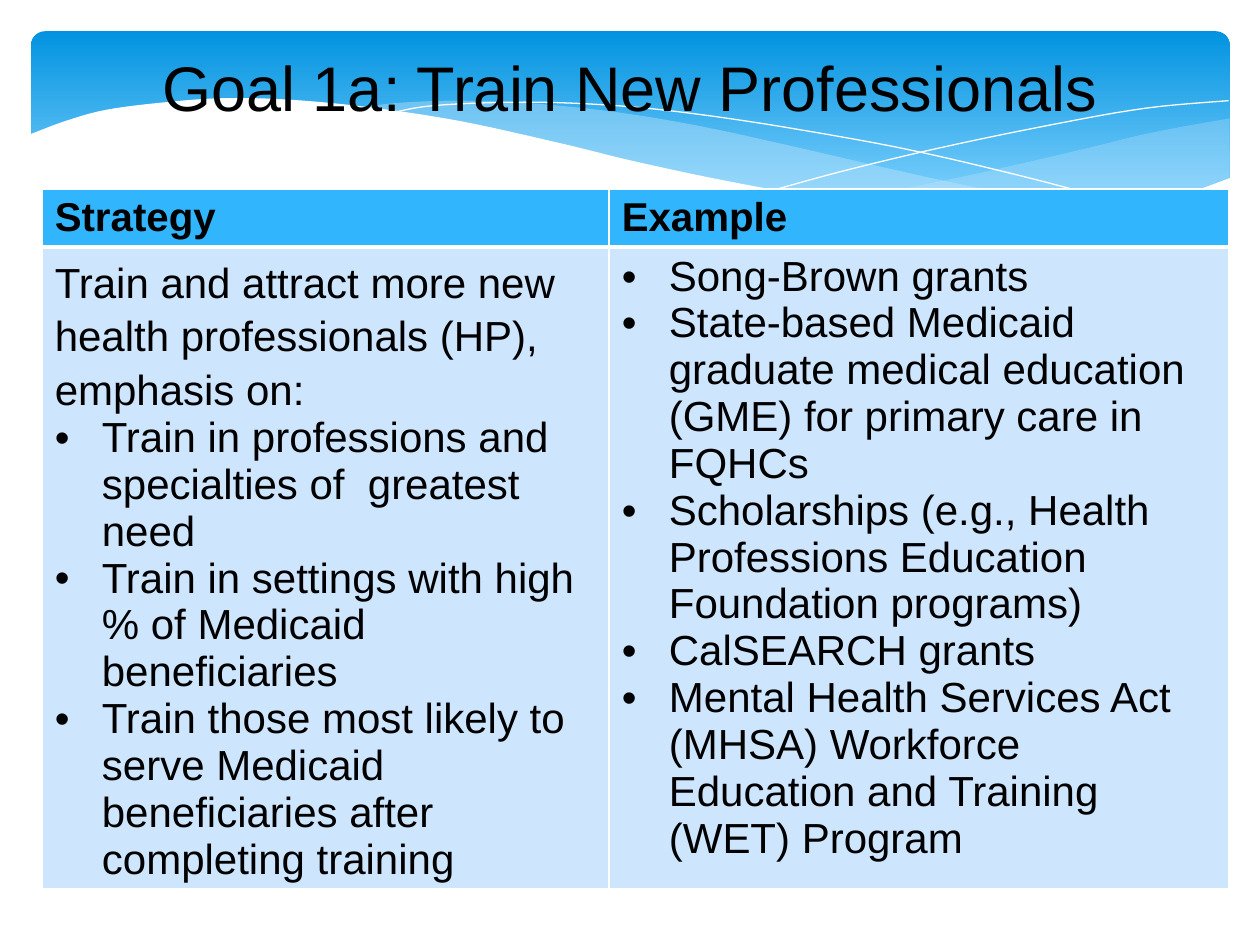
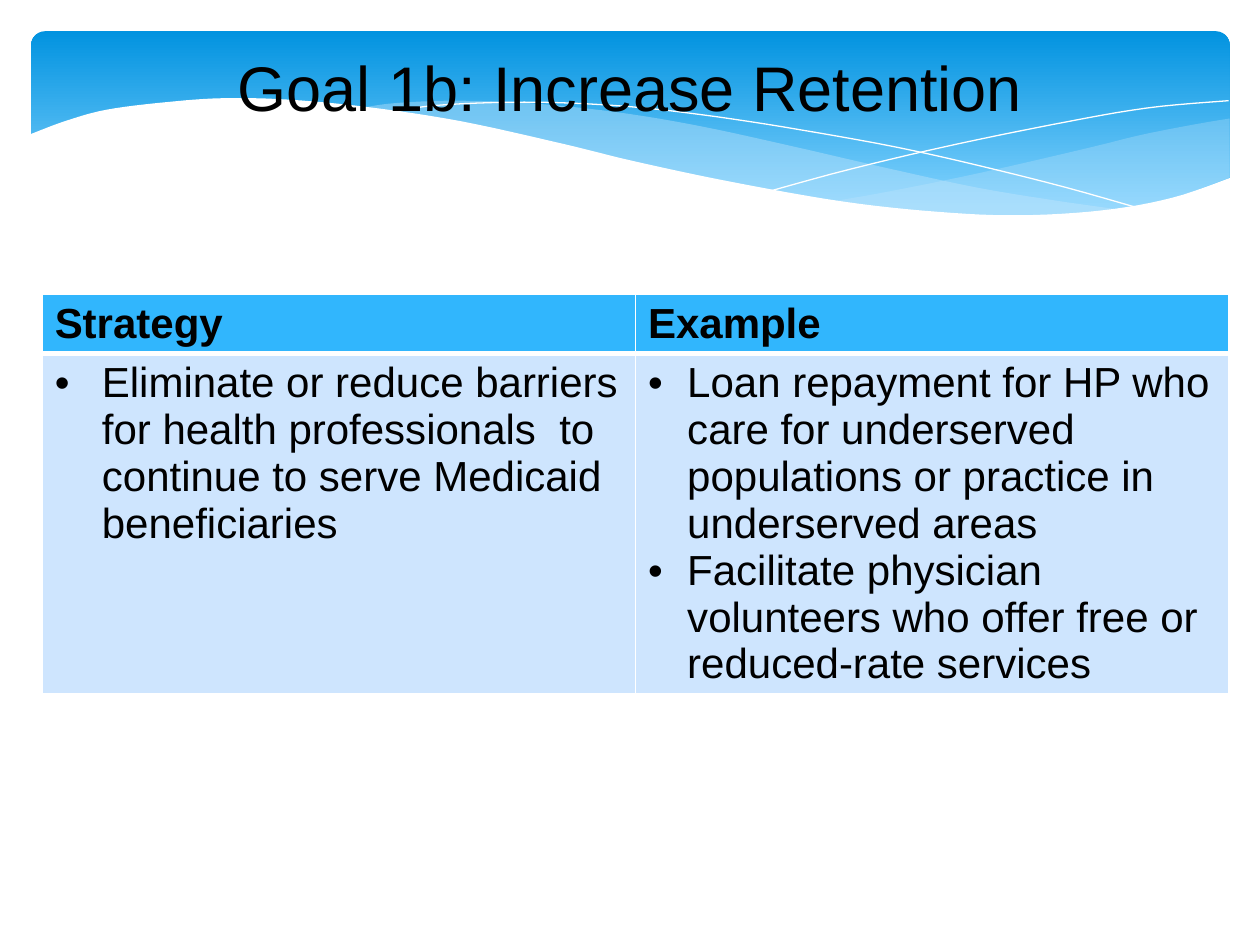
from lxml import etree
from pptx import Presentation
from pptx import util as u
from pptx.dml.color import RGBColor
from pptx.enum import shapes, text
from pptx.oxml.ns import qn

COLORS = {
    "text": "000000", "white": "FFFFFF", "band top": "0293E0", "band bottom": "83D3FE",
    "wave": "C6E7FC", "header": "31B6FD", "body": "CEE5FE",
}
RGB = {name: RGBColor.from_string(value) for name, value in COLORS.items()}
FONT = "Arial"


def write(frame, content, size=24, bold=False, align=None, spacing=None, indent=None, first=True):
    """Write one paragraph; an indent in centimetres makes it a bullet."""
    para = frame.paragraphs[0] if first else frame.add_paragraph()
    para.alignment = align
    para.line_spacing = spacing
    span = para.add_run()
    span.text = content
    span.font.name, span.font.size, span.font.bold = FONT, u.Pt(size), bold
    span.font.color.rgb = RGB["text"]
    if indent:
        props = para._p.get_or_add_pPr()
        props.set("marL", str(u.Cm(indent)))
        props.set("indent", str(-u.Cm(indent)))
        etree.SubElement(props, qn("a:buFont"), typeface=FONT)
        etree.SubElement(props, qn("a:buChar"), char="•")


def curve(knots, steps=6):
    """Return points in EMU on a smooth spline through knots in centimetres."""
    ends = [knots[0], *knots, knots[-1]]
    points = []
    for a, b, c, d in zip(ends, ends[1:], ends[2:], ends[3:]):
        for step in range(steps):
            t = step / steps
            points.append(tuple(
                u.Cm(q + t / 2 * (r - p + t * (2 * p - 5 * q + 4 * r - s + t * (3 * q - p - 3 * r + s))))
                for p, q, r, s in zip(a, b, c, d)))
    return points + [tuple(u.Cm(value) for value in knots[-1])]


# Waves from back to front: fill, opacity in percent, smooth stretches
WAVES = [
    ("wave", 29, [
        [(24.79, 2.39), (24.08, 2.51), (23.01, 2.72), (21.87, 3), (19.79, 3.48), (17.93, 3.86),
         (16.79, 4.06)],
        [(16.79, 4.06), (18.26, 4.24), (19.84, 4.37), (21.21, 4.37), (22.38, 4.24), (23.57, 4.01),
         (24.79, 3.58)]]),
    ("wave", 40, [
        [(22.68, 4.24), (21.26, 4.04), (19.69, 3.78), (17.93, 3.4), (15.98, 2.95), (14.1, 2.54),
         (12.42, 2.26), (10.67, 2.08), (9.17, 2.03), (7.95, 2.08), (7.26, 2.18)],
        [(7.26, 2.18), (8.69, 2.39), (10.26, 2.69), (12.47, 3.2), (14.38, 3.63), (16.1, 3.96),
         (18.01, 4.22), (19.63, 4.37), (21.03, 4.39), (22.68, 4.24)]]),
    (None, 100, [
        [(7.85, 2.29), (8.74, 2.13), (10.57, 2.06), (12.42, 2.13), (14.12, 2.31), (16.15, 2.62),
         (18.47, 3.05), (21.11, 3.68), (23.04, 4.22)]]),
    (None, 100, [
        [(15.57, 3.84), (17.07, 3.43), (19, 2.97), (21.23, 2.51), (23.11, 2.18), (24.77, 2.03)]]),
    ("white", 100, [
        [(24.82, 3.58), (23.62, 3.99), (22.23, 4.24), (20.55, 4.34), (18.9, 4.27), (16.97, 4.06),
         (14.71, 3.66), (12.78, 3.25), (11.35, 2.9), (9.27, 2.44), (7.42, 2.16), (5.84, 2.01),
         (4.5, 1.98), (3.35, 2.06), (2.16, 2.21), (1.32, 2.44), (0.58, 2.72)],
        [(0.58, 5.69)], [(24.82, 5.69)]]),
]

# Body cells hold (text, bullet indent) pairs; lengths in centimetres
PAGES = [
    {"title": "Goal 1a: Train New Professionals", "top": 3.81, "header size": 23,
     "columns": (11.43, 12.5), "rows": (1.15, 12.93),
     "cells": [
         [("Train and attract more new health professionals (HP), emphasis on:", None),
          ("Train in professions and specialties of  greatest need", 0.95),
          ("Train in settings with high % of Medicaid beneficiaries", 0.95),
          ("Train those most likely to serve Medicaid beneficiaries after completing training", 0.95)],
         [("Song-Brown grants", 0.95),
          ("State-based Medicaid graduate medical education (GME) for primary care in FQHCs", 0.95),
          ("Scholarships (e.g., Health Professions Education Foundation programs)", 0.95),
          ("CalSEARCH grants", 0.95),
          ("Mental Health Services Act (MHSA) Workforce Education and Training (WET) Program", 0.95)]]},
    {"title": "Goal 1b: Increase Retention", "top": 5.93, "header size": 24,
     "columns": (11.96, 11.96), "rows": (1.18, 6.85),
     "cells": [
         [("Eliminate or reduce barriers for health professionals  to continue to serve "
           "Medicaid beneficiaries", 0.95)],
         [("Loan repayment for HP who care for underserved populations or practice in "
           "underserved areas", 0.79),
          ("Facilitate physician volunteers who offer free or reduced-rate services", 0.79)]]},
]

deck = Presentation()
deck.slide_width, deck.slide_height = u.Cm(25.4), u.Cm(19.05)
layout = deck.slide_layouts.get_by_name("Title Only")

for number, content in enumerate(PAGES):
    page = deck.slides.add_slide(layout)

    # Blue band and waves, made once and moved to the shared layout
    if number == 0:
        band = page.shapes.add_shape(shapes.MSO_SHAPE.ROUNDED_RECTANGLE,
                                     u.Cm(0.63), u.Cm(0.63), u.Cm(24.16), u.Cm(3.96))
        band.adjustments[0] = 0.07
        band.fill.gradient()
        band.fill.gradient_angle = 270
        for stop, name, place in zip(band.fill.gradient_stops, ("band top", "band bottom"), (0, 0.9)):
            stop.color.rgb, stop.position = RGB[name], place
        band.line.fill.background()
        backdrop = [band]

        for fill, opacity, stretches in WAVES:
            points = [point for knots in stretches for point in curve(knots)]
            builder = page.shapes.build_freeform(*points[0])
            builder.add_line_segments(points[1:], close=fill is not None)
            wave = builder.convert_to_shape()
            if fill:
                wave.fill.solid()
                wave.fill.fore_color.rgb = RGB[fill]
                wave.line.fill.background()
                color = wave.element.spPr.find(".//" + qn("a:srgbClr"))
                etree.SubElement(color, qn("a:alpha"), val=str(opacity * 1000))
            else:
                wave.fill.background()
                wave.line.color.rgb = RGB["white"]
                wave.line.width = u.Pt(0)
            backdrop.append(wave)

        for order, part in enumerate(backdrop):
            part.shadow.inherit = False
            part.element.find(".//" + qn("p:cNvPr")).set("id", str(20 + order))
            layout.shapes.element.insert(2 + order, part.element)

    # Title
    title = page.shapes.title
    title.left, title.top, title.width, title.height = u.Cm(0.85), u.Cm(0), u.Cm(23.7), u.Cm(3.48)
    title.text_frame.vertical_anchor = text.MSO_ANCHOR.MIDDLE
    title.text_frame.auto_size = text.MSO_AUTO_SIZE.NONE
    write(title.text_frame, content["title"], size=36, align=text.PP_ALIGN.CENTER)

    # Strategy and example table
    table = page.shapes.add_table(2, 2, u.Cm(0.85), u.Cm(content["top"]),
                                  u.Cm(sum(content["columns"])), u.Cm(sum(content["rows"]))).table
    table.horz_banding = False
    for column, width in zip(table.columns, content["columns"]):
        column.width = u.Cm(width)
    for row, height in zip(table.rows, content["rows"]):
        row.height = u.Cm(height)

    for index, heading in enumerate(("Strategy", "Example")):
        head, body = table.cell(0, index), table.cell(1, index)
        write(head.text_frame, heading, size=content["header size"], bold=True)
        for line, (words, indent) in enumerate(content["cells"][index]):
            write(body.text_frame, words, indent=indent, spacing=None if indent else 1.15,
                  first=line == 0)

        # Cell fills and white borders, thick below the header
        for cell, name, thick in ((head, "header", "lnB"), (body, "body", "lnT")):
            props = cell._tc.get_or_add_tcPr()
            for side in ("lnL", "lnR", "lnT", "lnB"):
                edge = etree.SubElement(props, qn("a:" + side), w=str(u.Pt(3 if side == thick else 1)))
                paint = etree.SubElement(edge, qn("a:solidFill"))
                etree.SubElement(paint, qn("a:srgbClr"), val=COLORS["white"])
            cell.fill.solid()
            cell.fill.fore_color.rgb = RGB[name]

deck.save("out.pptx")
